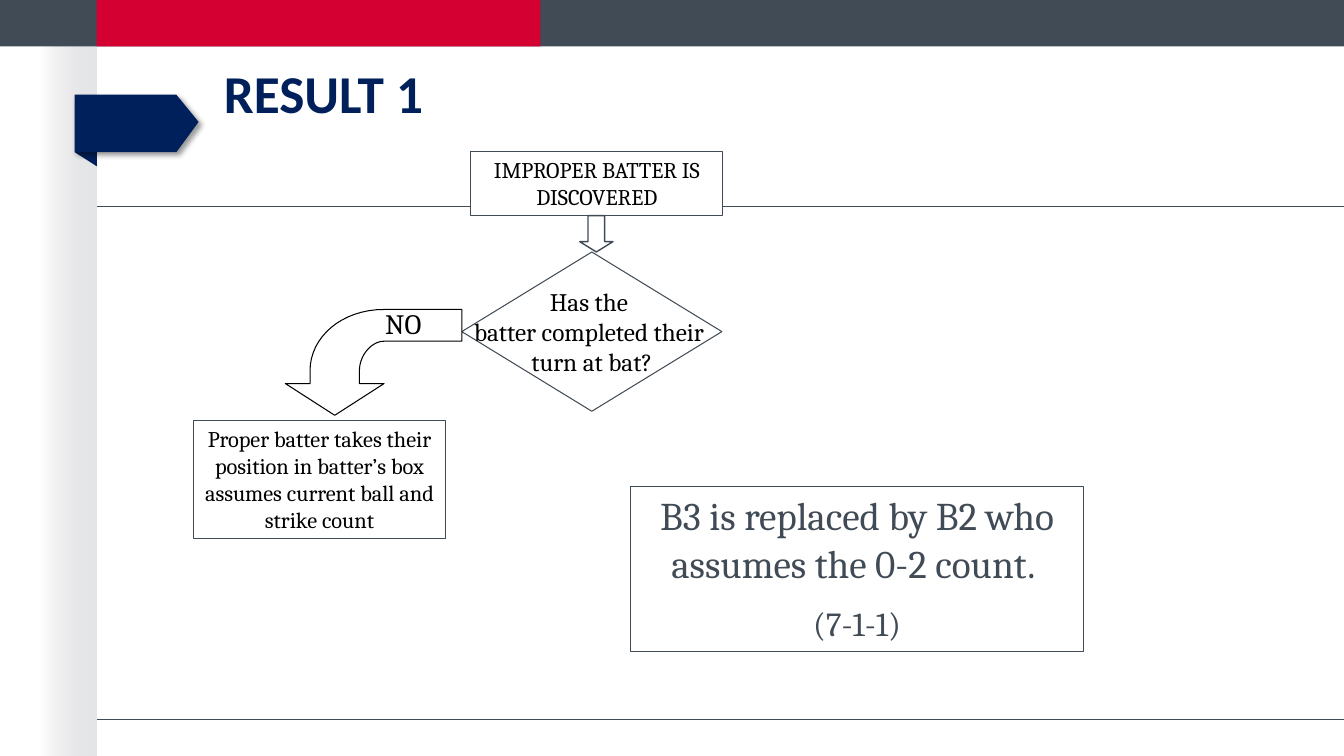
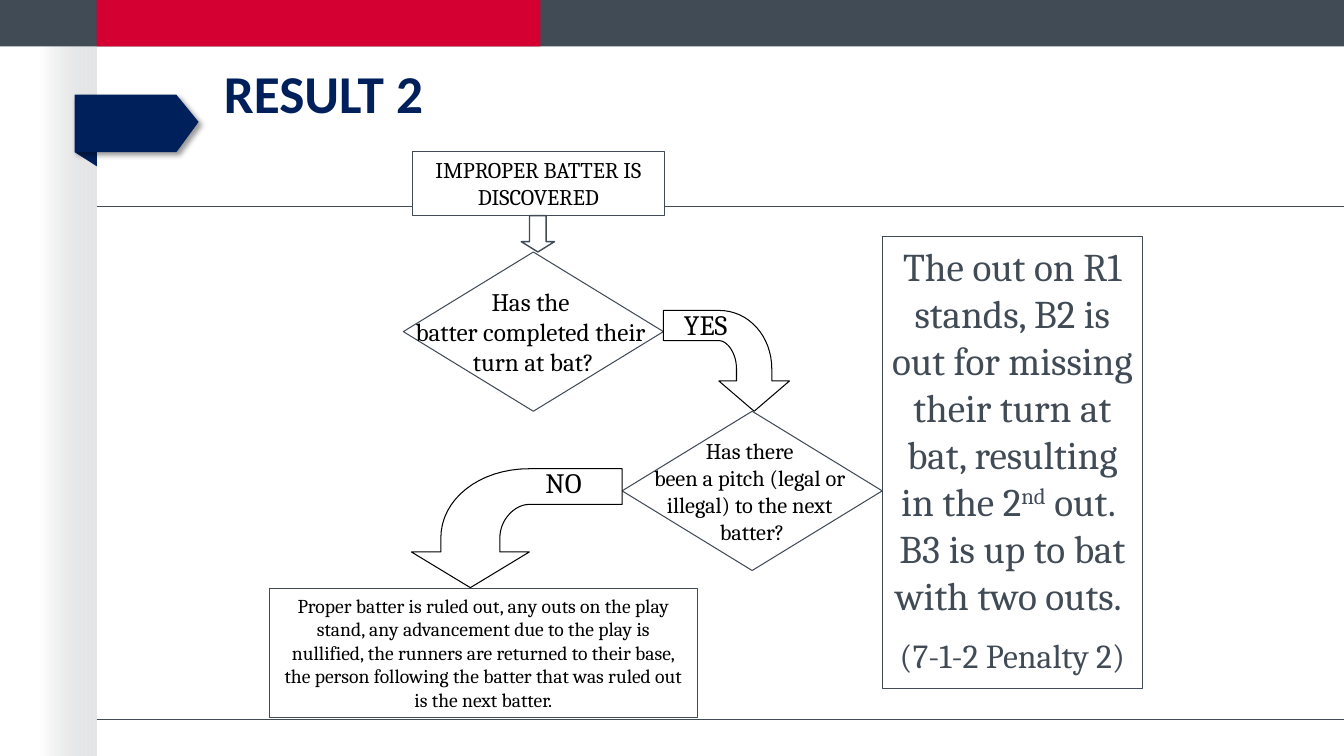
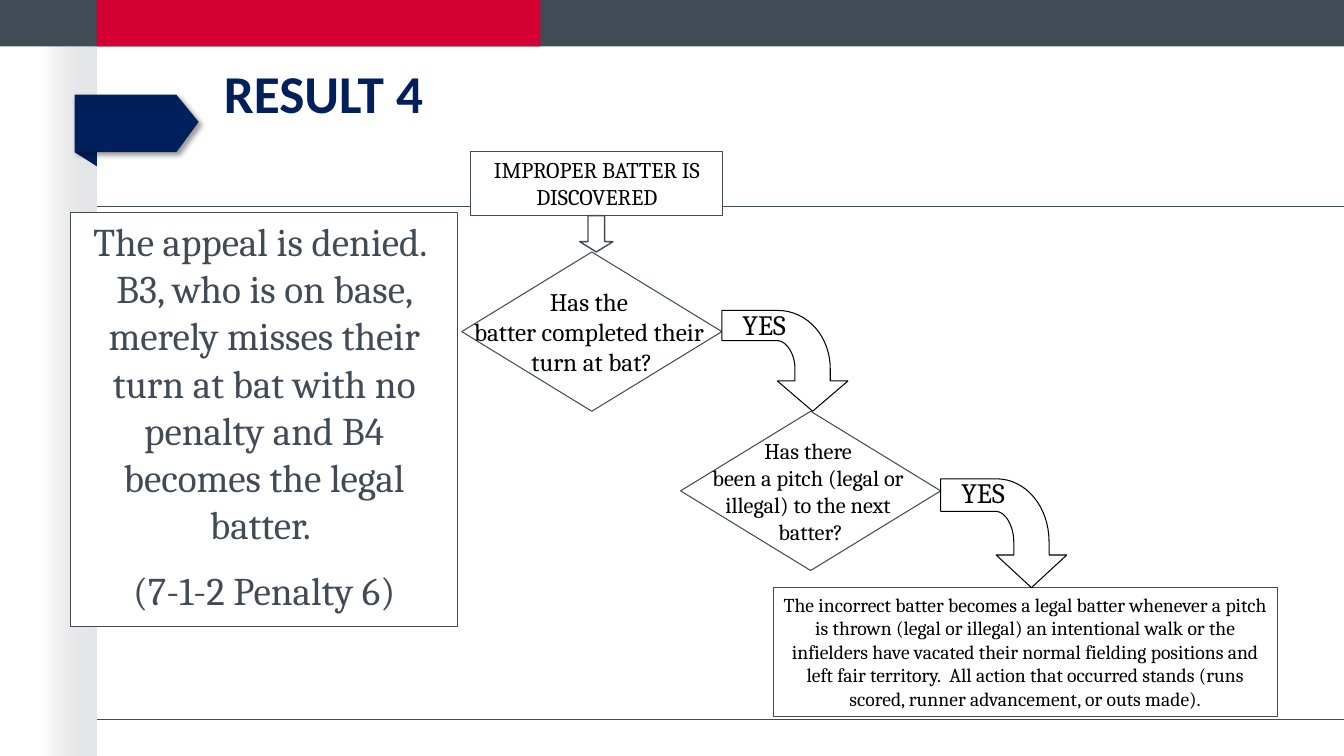
import pptx
import pptx.dml.color
import pptx.enum.shapes
import pptx.enum.text
import pptx.oxml.ns
import pptx.util
from lxml import etree

Inches = pptx.util.Inches
Pt = pptx.util.Pt
ShapeKind = pptx.enum.shapes.MSO_SHAPE
Anchor = pptx.enum.text.MSO_ANCHOR
Align = pptx.enum.text.PP_ALIGN
qn = pptx.oxml.ns.qn

COLORS = {
    "slate": "414B56",
    "red": "D50032",
    "navy": "00205B",
    "white": "FFFFFF",
    "black": "000000",
    "fade_start": "C8C9CC",
    "fade_end": "E4E5E6",
}
HEADING_FONT = "Calibri"
BODY_FONT = "Cambria"
SLIDE_WIDTH, SLIDE_HEIGHT = 13.33, 7.5
BAND_HEIGHT = 0.46
MARGIN_LINE = 0.96
DIAMOND_WIDTH, DIAMOND_HEIGHT = 2.58, 1.58
FIRST_TOP = 2.5
SECOND_TOP = FIRST_TOP + DIAMOND_HEIGHT
SECOND_SHIFT = 2.17
ANSWERS = {
    "YES": {"direction": 1, "label_offset": 0.42, "label_width": 0.73},
    "NO": {"direction": -1, "label_offset": 0.58, "label_width": 0.61},
}
TURN_QUESTION = "Has the \nbatter completed their \nturn at bat?"
PITCH_QUESTION = "Has there \nbeen a pitch (legal or \nillegal) to the next \nbatter?"


def rgb(name):
    return pptx.dml.color.RGBColor.from_string(COLORS[name])


def inches(*lengths):
    return [Inches(length) for length in lengths]


def write(text_frame, text, size=16, last_size=None, font=BODY_FONT, color="black",
          bold=False, align=Align.CENTER, anchor=Anchor.TOP, wrap=True,
          gap=0, line_spacing=None):
    text_frame.word_wrap = wrap
    text_frame.vertical_anchor = anchor
    lines = text.split("\n")
    for number, line in enumerate(lines):
        paragraph = text_frame.add_paragraph() if number else text_frame.paragraphs[0]
        is_last = number == len(lines) - 1
        points = last_size if last_size and is_last else size
        paragraph.alignment = align
        paragraph.line_spacing = line_spacing
        if number and gap:
            paragraph.space_before = Pt(points * gap)
        for position, piece in enumerate(line.split("^")):
            run = paragraph.add_run()
            run.text = piece
            run.font.name = font
            run.font.size = Pt(points)
            run.font.bold = bold
            run.font.color.rgb = rgb(color)
            if position % 2:
                run._r.get_or_add_rPr().set("baseline", "30000")


def paint(shape, fill="white", line=None, line_width=0.75):
    shape.shadow.inherit = False
    shape.fill.solid()
    shape.fill.fore_color.rgb = rgb(fill)
    if line:
        shape.line.color.rgb = rgb(line)
        shape.line.width = Pt(line_width)
    else:
        shape.line.fill.background()
    return shape


def add_block(slide, kind, box, **look):
    return paint(slide.shapes.add_shape(kind, *inches(*box)), **look)


def add_outline(slide, points, **look):
    points = [inches(*point) for point in points]
    builder = slide.shapes.build_freeform(*points[0])
    builder.add_line_segments(points[1:], close=True)
    return paint(builder.convert_to_shape(), **look)


def add_rule(slide, top):
    rule = slide.shapes.add_connector(
        pptx.enum.shapes.MSO_CONNECTOR.STRAIGHT,
        *inches(MARGIN_LINE, top, SLIDE_WIDTH, top))
    rule.line.color.rgb = rgb("slate")
    rule.line.width = Pt(1)
    etree.SubElement(rule.element.spPr, qn("a:effectLst"))
    return rule


def add_fade(slide):
    fade = add_block(slide, ShapeKind.RECTANGLE, (0.4, 0.45, 0.56, 7.05))
    fade.fill.gradient()
    fade.fill.gradient_angle = 0
    for stop, name in zip(fade.fill.gradient_stops, ("fade_start", "fade_end")):
        stop.color.rgb = rgb(name)
    first_color = fade.element.find(".//" + qn("a:gs") + "/" + qn("a:srgbClr"))
    etree.SubElement(first_color, qn("a:alpha"), val="0")
    return fade


def add_ribbon(slide):
    fold = add_outline(slide, [(0.74, 1.51), (0.96, 1.51), (0.96, 1.65)], fill="navy")
    tag = add_outline(
        slide, [(0.74, 0.94), (1.75, 0.94), (1.97, 1.21), (1.75, 1.51), (0.74, 1.51)],
        fill="navy")
    shadow = etree.SubElement(
        tag.element.spPr.find(qn("a:effectLst")), qn("a:outerShdw"),
        blurRad=str(Pt(4)), dist=str(Pt(3)), dir="2700000", algn="tl", rotWithShape="0")
    shadow_color = etree.SubElement(shadow, qn("a:srgbClr"), val=COLORS["black"])
    etree.SubElement(shadow_color, qn("a:alpha"), val="40000")
    return [fold, tag]


def dress_layout(layout, slide):
    for placeholder in list(layout.placeholders):
        if placeholder.placeholder_format.type != pptx.enum.shapes.PP_PLACEHOLDER.TITLE:
            layout.shapes.element.remove(placeholder.element)
    decorations = [
        add_fade(slide),
        add_block(slide, ShapeKind.RECTANGLE, (0, 0, SLIDE_WIDTH, BAND_HEIGHT), fill="slate"),
        add_block(slide, ShapeKind.RECTANGLE, (MARGIN_LINE, 0, 4.4, BAND_HEIGHT), fill="red"),
        add_rule(slide, 2.05),
        add_rule(slide, 7.14),
        *add_ribbon(slide),
    ]
    for shape in decorations:
        layout.shapes.element.append(shape.element)


def set_title(slide, text):
    title = slide.shapes.title
    title.left, title.top, title.width, title.height = inches(2.12, 0.57, 10.97, 1.32)
    title.text_frame.margin_top = Inches(0.13)
    write(title.text_frame, text, size=38, font=HEADING_FONT, color="navy", bold=True,
          align=Align.LEFT, line_spacing=Pt(38))


def add_box(slide, box, text, **text_format):
    shape = add_block(slide, ShapeKind.RECTANGLE, box, line="slate")
    write(shape.text_frame, text, **text_format)


def add_ruling(slide, box, text, **text_format):
    add_box(slide, box, text, size=28, color="slate", gap=0.5, **text_format)


def add_question(slide, left, top, text, size):
    box = (left, top, DIAMOND_WIDTH, DIAMOND_HEIGHT)
    shape = add_block(slide, ShapeKind.FLOWCHART_DECISION, box, line="slate")
    write(shape.text_frame, text, size=size, anchor=Anchor.MIDDLE, wrap=False)


def curve(start, control_1, control_2, end, steps=16):
    points = []
    for step in range(steps + 1):
        t = step / steps
        weights = ((1 - t) ** 3, 3 * t * (1 - t) ** 2, 3 * t * t * (1 - t), t ** 3)
        corners = zip(start, control_1, control_2, end)
        points.append(tuple(sum(w * c for w, c in zip(weights, axis)) for axis in corners))
    return points


def add_answer(slide, answer, left, top, width, height):
    style = ANSWERS[answer]
    direction = style["direction"]
    outline = [
        (0, 0),
        *curve((0.44, 0), (0.68, 0), (0.86, 0.26), (0.86, 0.58)),
        (0.86, 0.7), (1, 0.7), (0.72, 1), (0.44, 0.7), (0.58, 0.7),
        *curve((0.58, 0.58), (0.58, 0.43), (0.51, 0.3), (0.44, 0.3)),
        (0, 0.3),
    ]
    points = [(left + direction * x * width, top + y * height) for x, y in outline]
    add_outline(slide, points, line="black")
    label_left = left + direction * style["label_offset"] - style["label_width"] / 2
    label = slide.shapes.add_textbox(
        *inches(label_left, top - 0.08, style["label_width"], 0.44))
    write(label.text_frame, answer, size=20, wrap=False)


def add_flow_start(slide, left):
    add_box(slide, (left + 0.09, 1.5, 2.5, 0.64), "IMPROPER BATTER IS DISCOVERED")
    add_question(slide, left, FIRST_TOP, TURN_QUESTION, 18)
    arrow = add_block(slide, ShapeKind.DOWN_ARROW, (left + 1.17, 2.14, 0.33, 0.36),
                      line="slate", line_width=1)
    arrow.adjustments[1] = 0.31


def add_pitch_step(slide, left):
    add_answer(slide, "YES", left + DIAMOND_WIDTH, 3.08, 1.25, 1)
    add_question(slide, left + SECOND_SHIFT, SECOND_TOP, PITCH_QUESTION, 16)


def build_result_1(slide):
    left = 4.58
    set_title(slide, "RESULT 1")
    add_flow_start(slide, left)
    add_box(slide, (1.92, 4.17, 2.5, 1.17),
            "Proper batter takes their position in batter’s box assumes current ball "
            "and strike count")
    add_answer(slide, "NO", left, 3.07, 1.75, 1.05)
    add_ruling(slide, (6.25, 4.83, 4.5, 1.63),
               "B3 is replaced by B2 who assumes the 0-2 count. \n(7-1-1)", last_size=24)


def build_result_2(slide):
    left = 4
    set_title(slide, "RESULT 2")
    add_flow_start(slide, left)
    add_box(slide, (2.67, 5.84, 4.25, 1.28),
            "Proper batter is ruled out, any outs on the play stand, any advancement due "
            "to the play is nullified, the runners are returned to their base, the person "
            "following the batter that was ruled out is the next batter.", size=14)
    add_pitch_step(slide, left)
    add_answer(slide, "NO", left + SECOND_SHIFT, 4.65, 2.09, 1.18)
    add_ruling(slide, (8.75, 2.35, 2.58, 4.48),
               "The out on R1 stands, B2 is out for missing their turn at bat, resulting in "
               "the 2^nd^ out.  B3 is up to bat with two outs. \n(7-1-2 Penalty 2)",
               last_size=24)


def build_result_4(slide):
    left = 4.58
    set_title(slide, "RESULT 4")
    add_flow_start(slide, left)
    add_box(slide, (7.67, 5.83, 5, 1.28),
            "The incorrect batter becomes a legal batter whenever a pitch is thrown (legal "
            "or illegal) an intentional walk or the infielders have vacated their normal "
            "fielding positions and left fair territory.  All action that occurred stands "
            "(runs scored, runner advancement, or outs made).", size=14)
    add_pitch_step(slide, left)
    add_answer(slide, "YES", left + SECOND_SHIFT + DIAMOND_WIDTH, 4.75, 1.25, 1.08)
    add_ruling(slide, (0.7, 2.11, 3.84, 4.11),
               "The appeal is denied.  B3, who is on base, merely misses their turn at bat "
               "with no penalty and B4 becomes the legal batter. \n(7-1-2 Penalty 6)")


def main():
    presentation = pptx.Presentation()
    presentation.slide_width, presentation.slide_height = inches(SLIDE_WIDTH, SLIDE_HEIGHT)
    layout = presentation.slide_layouts.get_by_name("Title Only")
    builders = (build_result_1, build_result_2, build_result_4)
    slides = [presentation.slides.add_slide(layout) for builder in builders]
    dress_layout(layout, slides[0])
    for builder, slide in zip(builders, slides):
        builder(slide)
    presentation.save("out.pptx")


if __name__ == "__main__":
    main()
